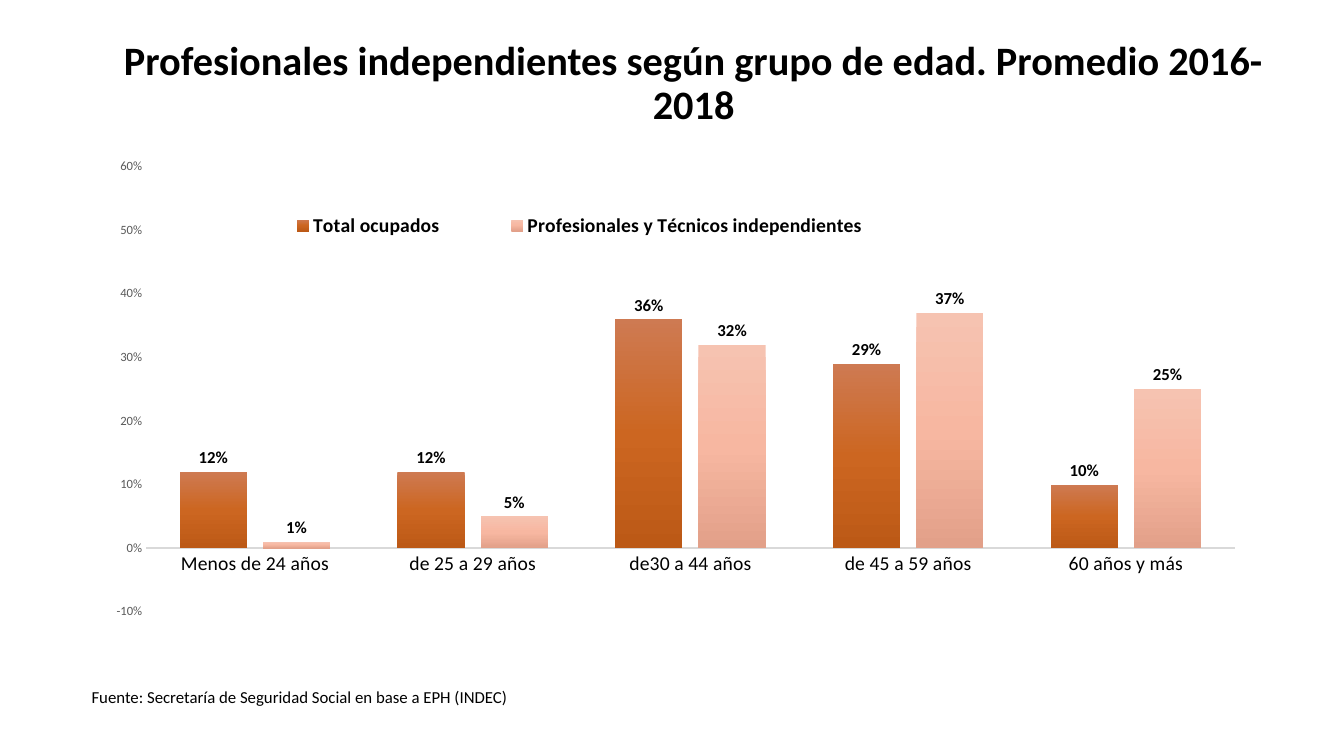
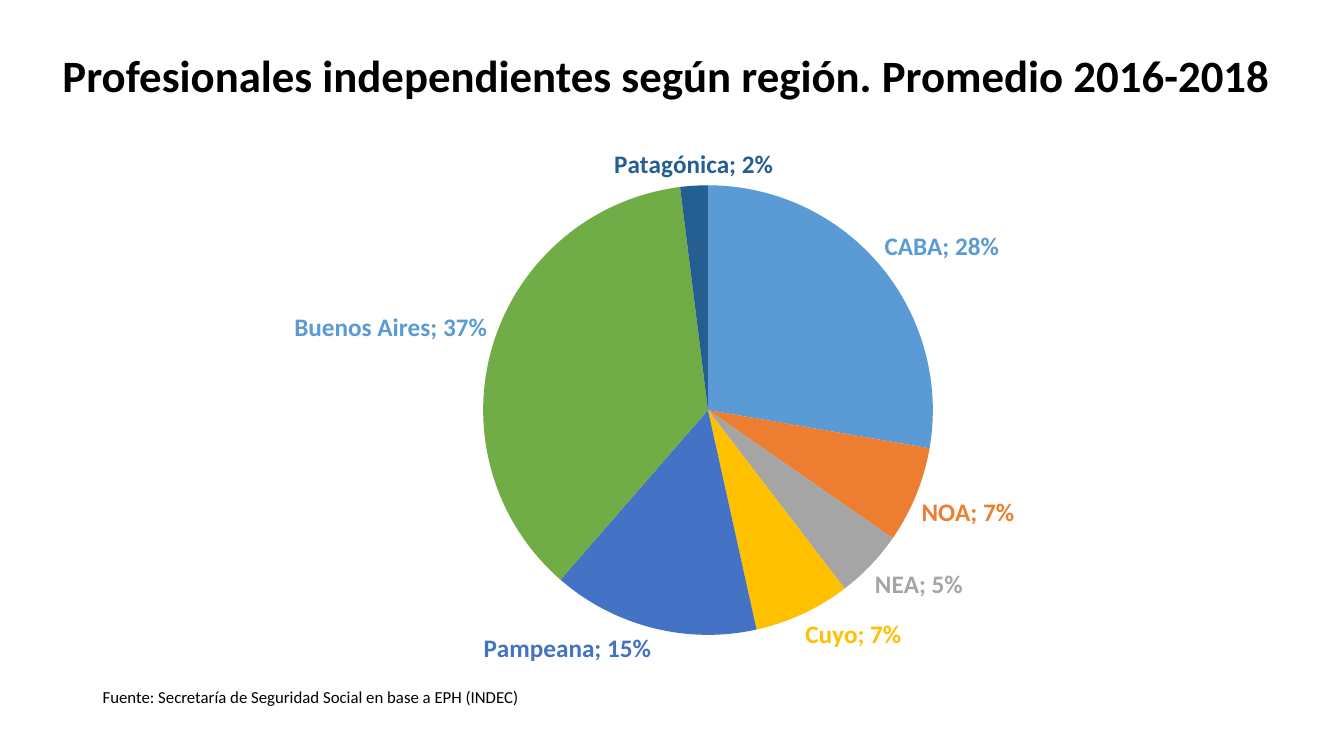
from copy import deepcopy

from lxml import etree
from pptx import Presentation
from pptx import util as u
from pptx.chart.data import CategoryChartData
from pptx.dml.color import RGBColor
from pptx.enum import chart as kinds
from pptx.enum import text
from pptx.oxml import ns

SOURCE = "Fuente: Secretaría de Seguridad Social en base a EPH (INDEC)"
BLACK, GREY, AXIS_LINE = "000000", "595959", "D9D9D9"
PERCENT = "0%"

AGE_GROUPS = ["Menos de 24 años", "de 25 a 29 años", "de30 a 44 años",
              "de 45 a 59 años", "60 años y más"]
# Name, values and gradient from top to bottom
AGE_SERIES = [
    ("Total ocupados", [0.12, 0.12, 0.36, 0.29, 0.1],
     ["CE7A52", "CC6621", "BC5916"]),
    ("Profesionales y Técnicos independientes", [0.01, 0.05, 0.32, 0.37, 0.25],
     ["F6C3B1", "F7B7A1", "E2A089"]),
]
# Region, share, slice colour, label colour
REGIONS = [
    ("CABA", 0.28, "5B9BD5", "5B9BD5"),
    ("NOA", 0.07, "ED7D31", "ED7D31"),
    ("NEA", 0.05, "A5A5A5", "A5A5A5"),
    ("Cuyo", 0.07, "FFC000", "FFC000"),
    ("Pampeana", 0.15, "4472C4", "4472C4"),
    ("Buenos Aires", 0.37, "70AD47", "5B9BD5"),
    ("Patagónica", 0.02, "255E91", "255E91"),
]


def colour(value):
    return RGBColor.from_string(value)


def assign(target, **values):
    for name, value in values.items():
        setattr(target, name, value)


def place(shape, box):
    sides = ("left", "top", "width", "height")
    assign(shape, **{side: u.Inches(size) for side, size in zip(sides, box)})


def set_layout(part, box, inner=False):
    """Fix a plot area or legend at fractions (x, y, w, h) of its chart."""
    for old in part.findall(ns.qn("c:layout")):
        part.remove(old)
    layout = etree.Element(ns.qn("c:layout"))
    manual = etree.SubElement(layout, ns.qn("c:manualLayout"))
    items = [("layoutTarget", "inner")] if inner else []
    items += [("xMode", "edge"), ("yMode", "edge"), *zip("xywh", box)]
    for tag, value in items:
        etree.SubElement(manual, ns.qn(f"c:{tag}")).set("val", str(value))
    position = part.find(ns.qn("c:legendPos"))
    if position is None:
        part.insert(0, layout)
    else:
        position.addnext(layout)


def fill_gradient(series, shades):
    """Fill bars from top to bottom with three evenly spaced shades."""
    fill = series.format.fill
    fill.gradient()
    fill.gradient_angle = 270
    stop_list = series._element.find(".//" + ns.qn("a:gsLst"))
    stop_list.append(deepcopy(stop_list[-1]))
    for index, (stop, shade) in enumerate(zip(fill.gradient_stops, shades)):
        stop.color.rgb = colour(shade)
        stop.position = index / 2


class Slides:
    """Shared style and the slide being filled."""

    font = "Calibri"

    def __init__(self):
        self.deck = Presentation()
        assign(self.deck, slide_width=u.Inches(13.33), slide_height=u.Inches(7.5))
        self.page = None

    def style(self, font, size, shade=BLACK, bold=False):
        assign(font, name=self.font, size=u.Pt(size), bold=bold)
        font.color.rgb = colour(shade)

    def add_page(self):
        self.page = self.deck.slides.add_slide(self.deck.slide_layouts[5])

    def title(self, words, box, size):
        shape = self.page.shapes.title
        place(shape, box)
        frame = shape.text_frame
        assign(frame, text=words, word_wrap=True, auto_size=text.MSO_AUTO_SIZE.NONE,
               vertical_anchor=text.MSO_ANCHOR.MIDDLE)
        para = frame.paragraphs[0]
        assign(para, alignment=text.PP_ALIGN.CENTER, line_spacing=0.9)
        self.style(para.runs[0].font, size, bold=True)

    def source(self, left):
        box = self.page.shapes.add_textbox(
            *map(u.Inches, (left, 6.76, 10.53, 0.3)))
        frame = box.text_frame
        assign(frame, text=SOURCE, word_wrap=True,
               auto_size=text.MSO_AUTO_SIZE.SHAPE_TO_FIT_TEXT)
        self.style(frame.paragraphs[0].runs[0].font, 12)

    def chart(self, kind, box, categories, series, plot_box):
        data = CategoryChartData(number_format=PERCENT)
        data.categories = categories
        for name, values in series:
            data.add_series(name, values)
        chart = self.page.shapes.add_chart(kind, *map(u.Inches, box), data).chart
        assign(chart, has_title=False, has_legend=False)
        self.style(chart.font, 10)
        set_layout(chart._chartSpace.find(".//" + ns.qn("c:plotArea")),
                   plot_box, inner=True)
        return chart

    def labels(self, labels, size, shade=BLACK, **options):
        assign(labels, number_format=PERCENT, number_format_is_linked=False,
               show_value=True, position=kinds.XL_LABEL_POSITION.OUTSIDE_END,
               **options)
        self.style(labels.font, size, shade, bold=True)

    def axis(self, axis, size, shade):
        assign(axis, has_major_gridlines=False,
               major_tick_mark=kinds.XL_TICK_MARK.NONE,
               minor_tick_mark=kinds.XL_TICK_MARK.NONE)
        self.style(axis.tick_labels.font, size, shade)

    def column_chart(self, box):
        chart = self.chart(kinds.XL_CHART_TYPE.COLUMN_CLUSTERED, box, AGE_GROUPS,
                           [entry[:2] for entry in AGE_SERIES],
                           (0.046, 0.04, 0.939, 0.832))
        plot = chart.plots[0]
        assign(plot, gap_width=100, overlap=-24, vary_by_categories=False)
        for series, (_, _, shades) in zip(plot.series, AGE_SERIES):
            fill_gradient(series, shades)
            self.labels(series.data_labels, 12)
        self.axis(chart.category_axis, 14, BLACK)
        line = chart.category_axis.format.line
        line.width = u.Pt(1)
        line.color.rgb = colour(AXIS_LINE)
        values = chart.value_axis
        self.axis(values, 9, GREY)
        assign(values, minimum_scale=-0.1, maximum_scale=0.6, major_unit=0.1)
        assign(values.tick_labels, number_format=PERCENT,
               number_format_is_linked=False)
        values.format.line.fill.background()
        chart.has_legend = True
        assign(chart.legend, position=kinds.XL_LEGEND_POSITION.BOTTOM,
               include_in_layout=False)
        self.style(chart.legend.font, 14, bold=True)
        set_layout(chart.legend._element, (0.12, 0.11, 0.6, 0.08))

    def pie_chart(self, box):
        names, shares, slices, label_shades = zip(*REGIONS)
        chart = self.chart(kinds.XL_CHART_TYPE.PIE, box, names,
                           [("Series 1", shares)], (0.354, 0.092, 0.378, 0.823))
        plot = chart.plots[0]
        plot.vary_by_categories = True
        series = plot.series[0]
        self.labels(series.data_labels, 18, slices[0], show_category_name=True)
        for index, (fill, shade) in enumerate(zip(slices, label_shades)):
            point = series.points[index]
            point.format.fill.solid()
            point.format.fill.fore_color.rgb = colour(fill)
            self.point_label(point.data_label, shade)

    def point_label(self, label, shade):
        """Show category and percentage in the label's own colour."""
        self.style(label.font, 18, shade, bold=True)
        label.position = kinds.XL_LABEL_POSITION.OUTSIDE_END
        element = label._dLbl
        element.find(ns.qn("c:showCatName")).set("val", "1")
        number = etree.Element(ns.qn("c:numFmt"), formatCode=PERCENT,
                               sourceLinked="0")
        element.find(ns.qn("c:idx")).addnext(number)
        separator = etree.SubElement(element, ns.qn("c:separator"))
        separator.text = "; "


def main():
    slides = Slides()
    slides.add_page()
    slides.title("Profesionales independientes según grupo de edad. Promedio 2016-2018",
                 (0.92, 0.49, 11.92, 0.69), 28.8)
    slides.column_chart((0.92, 1.44, 11.5, 5.31))
    slides.source(0.81)

    slides.add_page()
    slides.title("Profesionales independientes según región. Promedio 2016-2018",
                 (0.24, 0.4, 12.74, 0.74), 32)
    slides.source(0.92)
    slides.pie_chart((0.61, 1.34, 11.81, 5.42))
    slides.deck.save("out.pptx")


if __name__ == "__main__":
    main()
